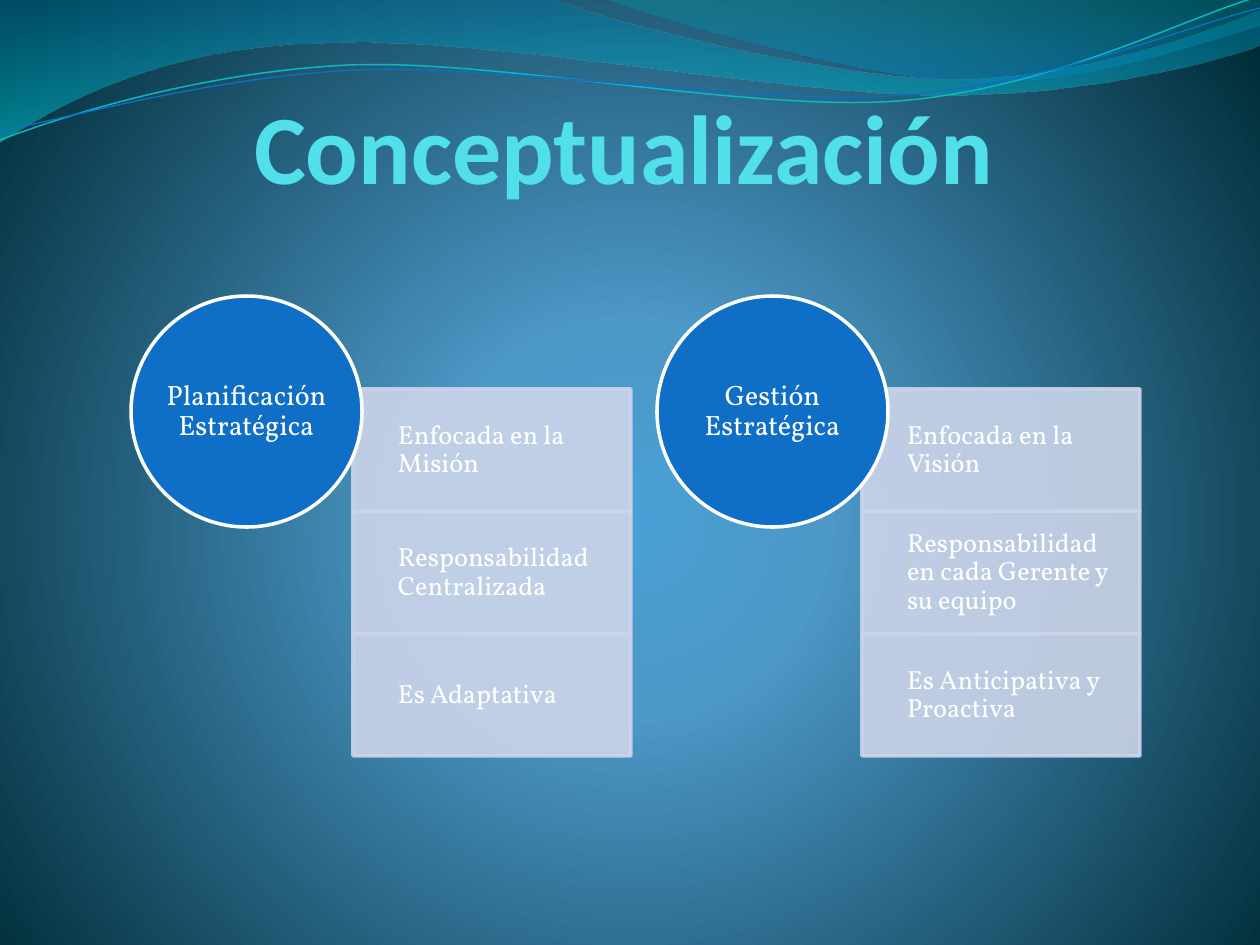
from lxml.etree import SubElement
from pptx import Presentation
from pptx.dml.color import RGBColor
from pptx.enum.shapes import MSO_SHAPE
from pptx.enum.text import MSO_ANCHOR, MSO_AUTO_SIZE, PP_ALIGN
from pptx.oxml.ns import qn
from pptx.util import Pt

SCALE = 914400 / 126  # EMU in one px


def px(*nums):
    return [round(n * SCALE) for n in nums]


def tint(color, code, alpha=100):
    color.rgb = RGBColor.from_string(code)
    if alpha < 100:
        node = color._xFill.find(qn("a:srgbClr"))
        SubElement(node, qn("a:alpha"), val=str(alpha * 1000))


def blend(fill, root, stops, center=None):
    """Gradient of (position, colour, opacity): downward, or around a center."""
    fill.gradient()
    grad = root.find(".//" + qn("a:gradFill"))
    for child in list(grad):
        grad.remove(child)
    rows = SubElement(grad, qn("a:gsLst"))
    for pos, code, alpha in stops:
        stop = SubElement(rows, qn("a:gs"), pos=str(pos * 1000))
        node = SubElement(stop, qn("a:srgbClr"), val=code)
        if alpha < 100:
            SubElement(node, qn("a:alpha"), val=str(alpha * 1000))
    if center:
        way = SubElement(grad, qn("a:path"), path="circle")
        sides = {side: str(n * 1000) for side, n in zip("ltrb", center)}
        SubElement(way, qn("a:fillToRect"), **sides)
    else:
        SubElement(grad, qn("a:lin"), ang="5400000", scaled="0")


def write(shape, text, size, font, code, align, anchor, pads, bold=None, lead=None):
    frame = shape.text_frame
    frame.word_wrap = True
    frame.auto_size = MSO_AUTO_SIZE.NONE
    frame.vertical_anchor = anchor
    (frame.margin_left, frame.margin_top,
     frame.margin_right, frame.margin_bottom) = px(*pads)
    para = frame.paragraphs[0]
    para.alignment = align
    para.line_spacing = lead
    run = para.add_run()
    run.text = text
    run.font.size, run.font.name, run.font.bold = Pt(size), font, bold
    tint(run.font.color, code)


def curve(slide, start, parts, close):
    """Outline of lines (x, y) and cubic curves (three points in a row)."""
    dots = [px(*part[i:i + 2]) for part in parts for i in range(0, len(part), 2)]
    pen = slide.shapes.build_freeform(*px(*start), scale=1.0)
    pen.add_line_segments(dots, close=close)
    shape = pen.convert_to_shape()
    shape.shadow.inherit = False
    # Turn each run of three points into one bend
    steps = iter(list(shape.element.iter(qn("a:lnTo"))))
    for part in parts:
        step = next(steps)
        if len(part) == 6:
            step.tag, rest = step.tag, [next(steps), next(steps)]
            bend = SubElement(step.getparent(), qn("a:cubicBezTo"))
            step.addprevious(bend)
            for old in [step, *rest]:
                bend.append(old[0])
                old.getparent().remove(old)
    return shape


def waves(slide):
    # Filled bands
    bands = [
        ((0, 0), [(554, -1), (600, 21, 837, 79, 955, 79),
                  (1074, 79, 1207, 33, 1260, 11), (1261, 45),
                  (1239, 55, 1096, 96, 940, 95), (784, 95, 481, 35, 324, 43),
                  (163, 45, 58, 105, -1, 142)],
         [(0, "0074A1", 45), (100, "00C6CF", 55)]),
        ((604, -1), [(641, 14, 859, 78, 969, 82),
                     (1079, 87, 1211, 40, 1260, 26), (1260, 0)],
         [(0, "00A1A9", 30), (80, "008BBF", 45)]),
    ]
    for start, parts, stops in bands:
        band = curve(slide, start, parts, True)
        blend(band.fill, band.element, stops)
        band.line.fill.background()
    # Thin lines
    lines = [
        ((0, 140), [(60, 117, 199, 72, 349, 65), (498, 59, 747, 112, 898, 101),
                    (1050, 89, 1182, 19, 1257, -3)], "0AB8BF", 0.85),
        ((0, 131), [(59, 121, 207, 77, 357, 70), (508, 64, 752, 106, 903, 95),
                    (1053, 84, 1186, 26, 1260, 8)], "0F6FC6", 0.75),
    ]
    for start, parts, code, width in lines:
        line = curve(slide, start, parts, False)
        line.fill.background()
        line.line.fill.solid()
        tint(line.line.color, code)
        line.line.width = Pt(width)


def block(slide, kind, box, fill, edge, alpha=100):
    shape = slide.shapes.add_shape(kind, *px(*box))
    shape.shadow.inherit = False
    shape.fill.solid()
    tint(shape.fill.fore_color, fill, alpha)
    shape.line.fill.solid()
    tint(shape.line.color, edge, alpha)
    shape.line.width = Pt(2)


def label(slide, box, text, size, align, pads):
    note = slide.shapes.add_textbox(*px(*box))
    write(note, text, size, "Vollkorn", "FFFFFF", align,
          MSO_ANCHOR.MIDDLE, pads, lead=0.9)


def title(slide, box, text):
    head = slide.shapes.title
    head.left, head.top, head.width, head.height = px(*box)
    write(head, text, 56, "Calibri", "51E0EA", PP_ALIGN.CENTER,
          MSO_ANCHOR.BOTTOM, (0, 0, 2, 0), bold=True)


def topic(slide, box, shift, name, items):
    """Stacked items, with a circle whose left edge is shift px from theirs."""
    left, top, wide, high = box
    step = high / len(items)
    for i, item in enumerate(items):
        y = top + i * step
        block(slide, MSO_SHAPE.RECTANGLE, (left, y, wide, step),
              "CCD5EA", "CCD5EA", 90)
        label(slide, (left + 45, y, wide - 45, step), item, 15,
              PP_ALIGN.LEFT, (0, 15, 15, 15))
    disc = (left + shift, top - 93, 231, 231)
    block(slide, MSO_SHAPE.OVAL, disc, "0F6FC6", "FFFFFF")
    label(slide, disc, name, 16, PP_ALIGN.CENTER, (34, 0, 34, 0))


def main():
    deck = Presentation()
    deck.slide_width, deck.slide_height = px(1260, 945)
    slide = deck.slides.add_slide(deck.slide_layouts[5])
    # Background
    blend(slide.background.fill, slide.element,
          [(0, "4AA0D6", 100), (25, "4C98C7", 100), (100, "002C38", 100)],
          (10, 110, 10, 100))
    waves(slide)
    title(slide, (58, 46, 1134, 158), "Conceptualización")
    # Two topics
    topic(slide, (353, 389, 278, 367), -222, "Planificación Estratégica",
          ["Enfocada en la Misión", "Responsabilidad Centralizada", "Es Adaptativa"])
    topic(slide, (862, 389, 278, 367), -205, "Gestión Estratégica",
          ["Enfocada en la Visión", "Responsabilidad en cada Gerente y su equipo",
           "Es Anticipativa y Proactiva"])
    deck.save("out.pptx")


if __name__ == "__main__":
    main()
